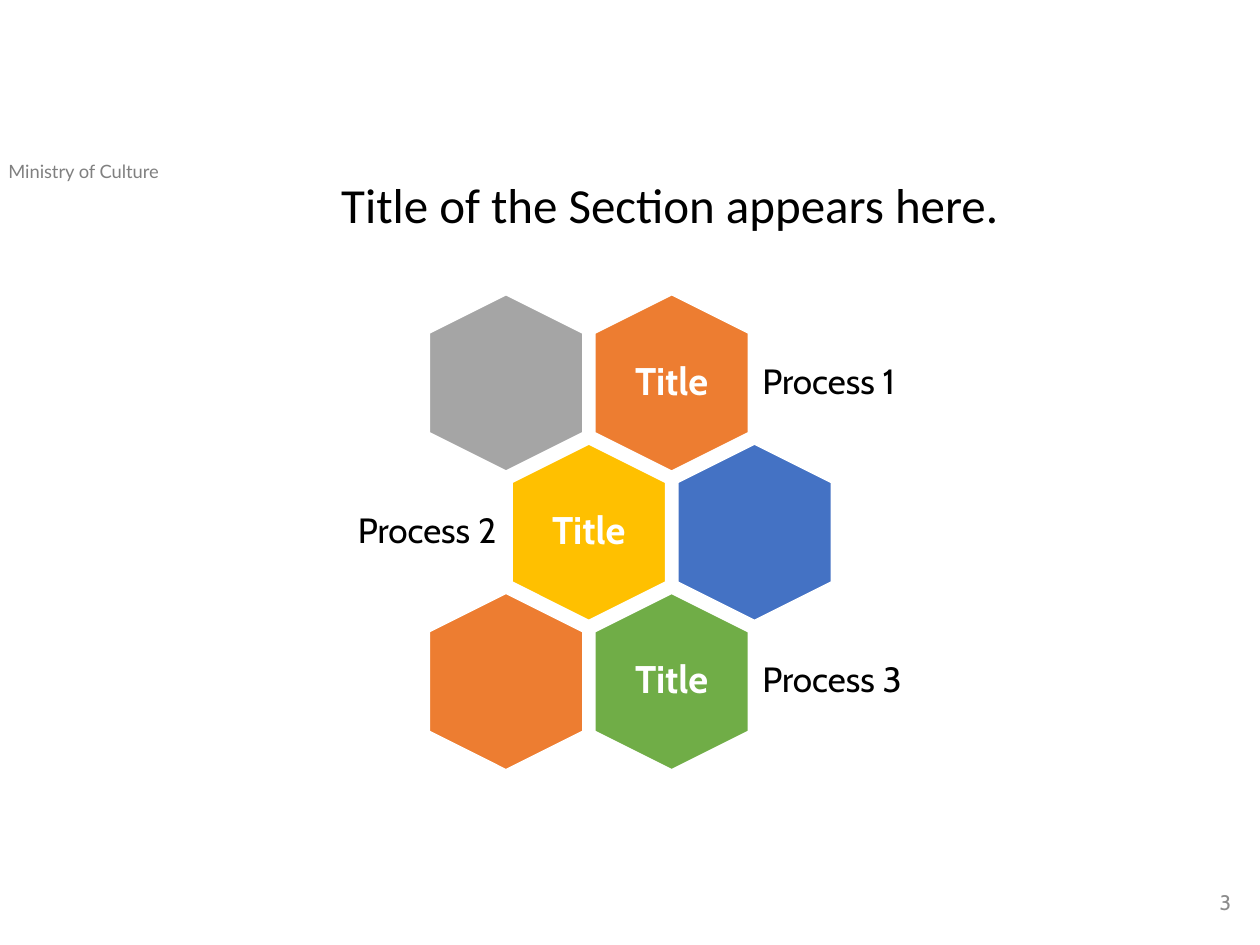
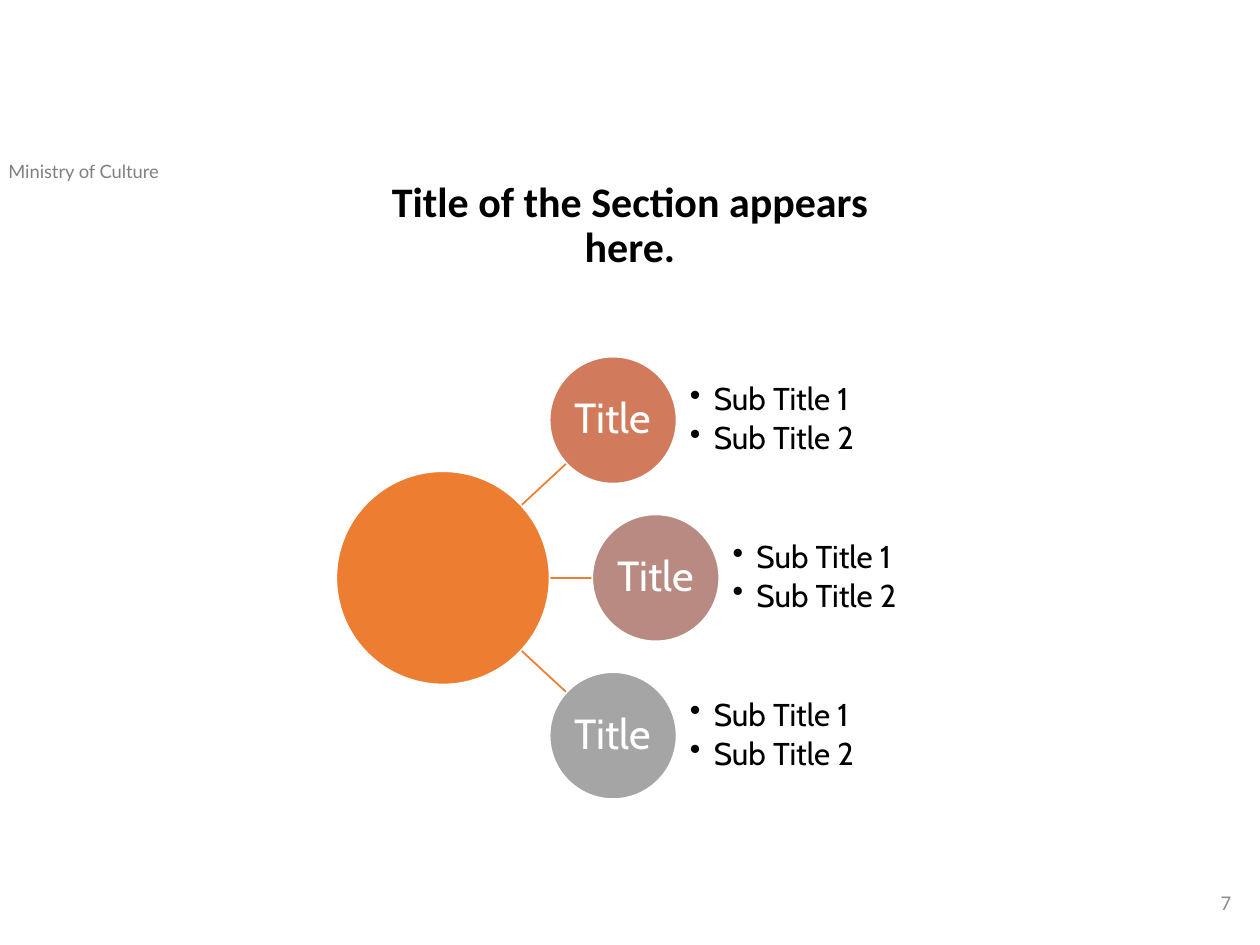
import math

import pptx
import pptx.dml.color
import pptx.enum.shapes
import pptx.enum.text
import pptx.util
from lxml import etree

Cm, Pt = pptx.util.Cm, pptx.util.Pt
SHAPE = pptx.enum.shapes.MSO_SHAPE
ALIGN = pptx.enum.text.PP_ALIGN
ANCHOR = pptx.enum.text.MSO_ANCHOR

COLORS = {
    "black": "000000", "white": "FFFFFF", "ministry": "808080", "number": "8C8C8C",
    "orange": "ED7D31", "grey": "A5A5A5", "yellow": "FFC000", "blue": "4472C4",
    "green": "70AD47", "clay": "D17B5C", "rose": "B98A82",
}
BODY_FONT, TITLE_FONT, MINISTRY_FONT = "Cabin", "Calibri", "Lato"
SECTION_TITLE = "Title of the Section appears here."


def rgb(name):
    return pptx.dml.color.RGBColor.from_string(COLORS[name])


def write(s, lines, size, color="black", font=BODY_FONT, bold=False, align=ALIGN.LEFT,
          anchor=ANCHOR.MIDDLE, inset=None, spacing=0.9, gap=0, bullet=False):
    """Fill a shape with one paragraph per line; gap is the space between them in points."""
    tf = s.text_frame
    tf.word_wrap = True
    tf.vertical_anchor = anchor
    if inset is not None:
        tf.margin_left = tf.margin_right = tf.margin_top = tf.margin_bottom = Cm(inset)
    tf.text = "\n".join(lines)
    for p in tf.paragraphs:
        p.alignment = align
        p.line_spacing = spacing
        if gap and p is not tf.paragraphs[-1]:
            p.space_after = Pt(gap)
        if bullet:
            add_bullet(p)
        for r in p.runs:
            r.font.name, r.font.size, r.font.bold = font, Pt(size), bold
            r.font.color.rgb = rgb(color)


def add_bullet(p):
    pPr = p._p.get_or_add_pPr()
    pPr.set("marL", str(Cm(0.48)))
    pPr.set("indent", str(-Cm(0.48)))
    bullet = etree.SubElement(pPr, pptx.oxml.ns.qn("a:buChar"))
    bullet.set("char", "•")


def add_text(slide, left, top, width, height, lines, size, **style):
    s = slide.shapes.add_textbox(Cm(left), Cm(top), Cm(width), Cm(height))
    write(s, lines, size, **style)


def add_centred_shape(slide, kind, x, y, width, height, color):
    s = slide.shapes.add_shape(kind, Cm(x - width / 2), Cm(y - height / 2),
                               Cm(width), Cm(height))
    s.shadow.inherit = False
    s.fill.solid()
    s.fill.fore_color.rgb = rgb(color)
    s.line.color.rgb = rgb("white")
    s.line.width = Pt(1)
    return s


def add_slide(prs, number, number_font, title_box, **title_style):
    """Add a slide with the ministry name, page number and section title."""
    slide = prs.slides.add_slide(prs.slide_layouts[6])
    add_text(slide, -0.08, 3.1, 5.54, 0.71, ["Ministry of Culture"], 10.5,
             color="ministry", font=MINISTRY_FONT, anchor=ANCHOR.TOP, spacing=1)
    add_text(slide, 19.35, 17.68, 5.72, 1.02, [number], 12, color="number",
             font=number_font, align=ALIGN.RIGHT, spacing=1)
    add_text(slide, *title_box, [SECTION_TITLE], font=TITLE_FONT,
             anchor=ANCHOR.TOP, **title_style)
    return slide


def add_honeycomb(slide, x, y):
    """Draw rows of two hexagons; x, y is the centre of the top left one."""
    column_step, row_step = 3.34, 3.01
    # row, column, colour, process label, side of the label
    cells = [
        (0, 0, "grey", None, None), (0, 1, "orange", "Process 1", "right"),
        (1, 0, "yellow", "Process 2", "left"), (1, 1, "blue", None, None),
        (2, 0, "orange", None, None), (2, 1, "green", "Process 3", "right"),
    ]
    for row, column, color, process, side in cells:
        cx = x + (column + row % 2 / 2) * column_step
        cy = y + row * row_step
        s = add_centred_shape(slide, SHAPE.HEXAGON, cx, cy, 3.56, 3.1, color)
        s.rotation = 90
        s.adjustments[0] = 0.25
        if process:
            add_text(slide, cx - 1.07, cy - 1.22, 2.14, 2.44, ["Title"], 22,
                     color="white", bold=True, align=ALIGN.CENTER, inset=0.23)
            on_right = side == "right"
            add_text(slide, cx + 1.63 if on_right else cx - 5.52, cy - 1.07, 3.86, 2.14,
                     [process], 20, inset=0.2,
                     align=ALIGN.LEFT if on_right else ALIGN.RIGHT)


def add_spoke(slide, x, y, dx, dy, start, end):
    """Draw a line from x, y towards dx, dy, between two distances."""
    length = math.hypot(dx, dy)
    points = [Cm(centre + offset * distance / length)
              for distance in (start, end) for centre, offset in ((x, dx), (y, dy))]
    line = slide.shapes.add_connector(pptx.enum.shapes.MSO_CONNECTOR.STRAIGHT, *points)
    line.line.color.rgb = rgb("orange")
    line.line.width = Pt(1)
    etree.SubElement(line._element.spPr, pptx.oxml.ns.qn("a:effectLst"))


def add_radial_list(slide, x, y):
    """Draw a hub centred at x, y with three titled circles and their bullets."""
    hub, node = 4.3, 2.56
    nodes = [(3.43, -3.18, "clay"), (4.29, 0, "rose"), (3.43, 3.18, "grey")]
    for dx, dy, color in nodes:
        add_spoke(slide, x, y, dx, dy, 2, math.hypot(dx, dy) - node / 2)
    add_centred_shape(slide, SHAPE.OVAL, x, y, hub, hub, "orange")
    for dx, dy, color in nodes:
        s = add_centred_shape(slide, SHAPE.OVAL, x + dx, y + dy, node, node, color)
        write(s, ["Title"], 24, color="white", align=ALIGN.CENTER, inset=0.05)
        add_text(slide, x + dx + 1.55, y + dy - node / 2, 3.86, node,
                 ["Sub Title 1", "Sub Title 2"], 18, inset=0, gap=2.7, bullet=True)


def main():
    prs = pptx.Presentation()
    prs.slide_width, prs.slide_height = Cm(25.4), Cm(19.05)
    slide = add_slide(prs, "3", BODY_FONT, (6.63, 3.53, 16.2, 2), size=28)
    add_honeycomb(slide, 10.2, 7.72)
    slide = add_slide(prs, "7", TITLE_FONT, (6.7, 3.53, 12, 2), size=24, bold=True,
                      align=ALIGN.CENTER)
    add_radial_list(slide, 8.93, 11.65)
    prs.save("out.pptx")


if __name__ == "__main__":
    main()
